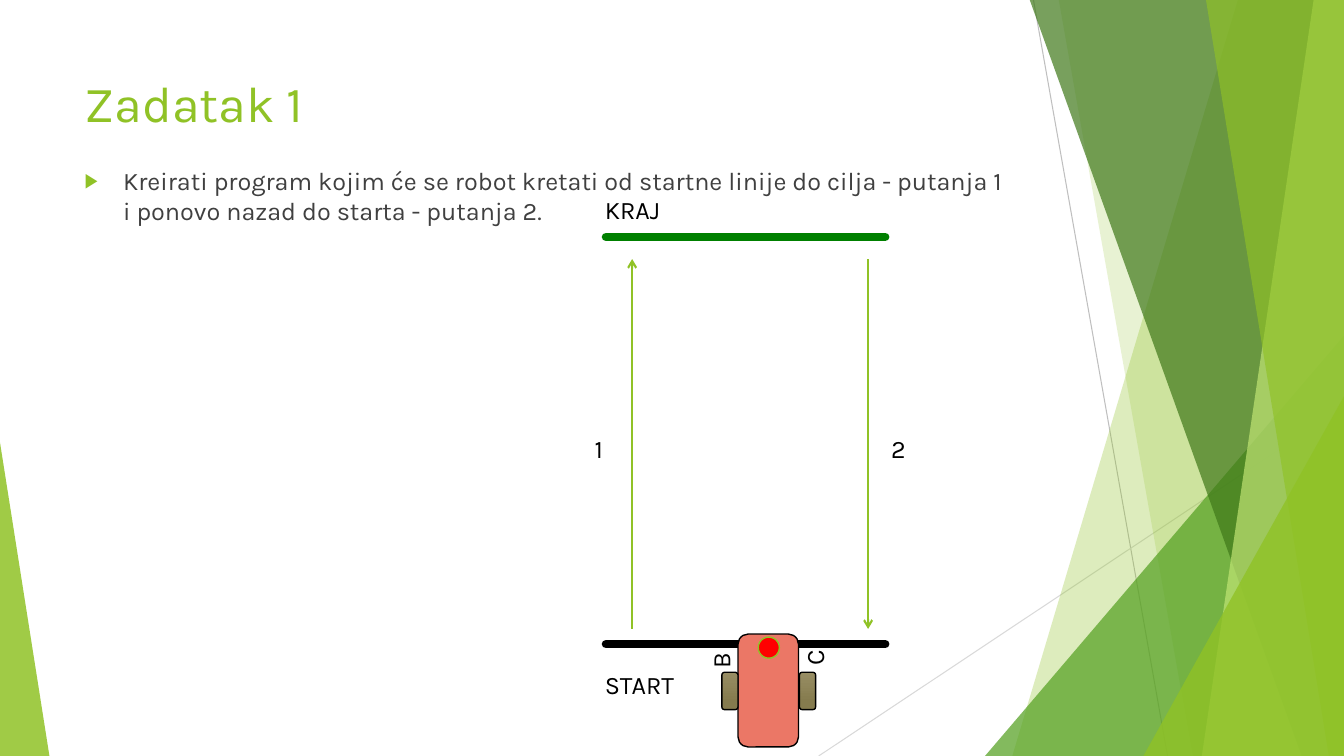
"""Build the slide for robot task 1: drive from the start line to the finish and back."""
from dataclasses import dataclass
from typing import Any, Optional, Union

import pptx
import pptx.dml.color
import pptx.enum.shapes
import pptx.enum.text
import pptx.oxml
import pptx.oxml.ns
import pptx.util
from lxml import etree

PX = 9144
SLIDE_WIDTH, SLIDE_HEIGHT = 1333, 750
FONT = "Karla"
COLOURS = {
    "lime": "90C226", "green": "54A021", "forest": "3F7819", "pale": "C0E474",
    "silver": "BFBFBF", "mist": "D9D9D9", "text": "404040", "black": "000000",
    "finish": "008000", "robot": "EB7766", "sensor": "FF0000",
    "wheel_top": "988E64", "wheel_bottom": "857B4E",
}
PRESET = pptx.enum.shapes.MSO_SHAPE
AUTO_SIZE = pptx.enum.text.MSO_AUTO_SIZE


@dataclass(frozen=True)
class Box:
    left: int
    top: int
    width: int
    height: int


@dataclass(frozen=True)
class Band:
    top_x: int
    bottom_x: int
    colour: str
    alpha: int


@dataclass(frozen=True)
class Figure:
    preset: Any
    box: Box
    colours: tuple[str, ...]
    outline: Optional[str] = None
    alpha: int = 100
    apex: Optional[float] = None


@dataclass(frozen=True)
class Stroke:
    start: tuple[int, int]
    end: tuple[int, int]
    colour: str
    width: float
    cap: str = "flat"
    arrow: bool = False


@dataclass(frozen=True)
class Label:
    text: str
    box: Box
    wrap: bool = True
    rotation: int = 0


BACKDROP: list[Union[Stroke, Band, Figure]] = [
    Stroke((1025, 0), (1158, 750), "silver", 0.75),
    Stroke((1333, 403), (812, 750), "mist", 0.75),
    Band(1228, 1004, "lime", 30),
    Band(1050, 1183, "lime", 20),
    Figure(PRESET.ISOSCELES_TRIANGLE, Box(977, 333, 356, 417), ("green",), alpha=72, apex=1),
    Band(1021, 1291, "forest", 70),
    Band(1303, 1192, "pale", 70),
    Band(1196, 1318, "lime", 65),
    Figure(PRESET.ISOSCELES_TRIANGLE, Box(1134, 393, 199, 357), ("lime",), alpha=80, apex=1),
    Figure(PRESET.ISOSCELES_TRIANGLE, Box(0, 439, 49, 311), ("lime",), alpha=85, apex=0),
]
COURSE = [
    Stroke((878, 235), (601, 235), "finish", 6, cap="rnd"),
    Stroke((878, 639), (601, 639), "black", 6, cap="rnd"),
    Stroke((627, 624), (627, 257), "lime", 1.5, arrow=True),
    Stroke((861, 257), (861, 624), "lime", 1.5, arrow=True),
    Label("KRAJ", Box(590, 188, 76, 40), wrap=False),
    Label("START", Box(590, 659, 100, 40), wrap=False),
]
WHEELS = [
    Figure(PRESET.ROUNDED_RECTANGLE, Box(left, 667, 16, 37), ("wheel_top", "wheel_bottom"), "black")
    for left in (793, 716)
]
ROBOT = [
    Figure(PRESET.ROUNDED_RECTANGLE, Box(732, 629, 60, 112), ("robot",), "black"),
    *WHEELS,
    Figure(PRESET.OVAL, Box(752, 632, 21, 21), ("sensor",), "lime"),
    Label("B", Box(687, 635, 45, 30), rotation=270),
    Label("C", Box(780, 633, 45, 30), rotation=270),
]
PATH_NUMBERS = [Label("1", Box(580, 425, 34, 40)), Label("2", Box(874, 425, 34, 40))]


def rgb(name: str) -> pptx.dml.color.RGBColor:
    return pptx.dml.color.RGBColor.from_string(COLOURS[name])


def emu(*lengths: int) -> list[int]:
    return [length * PX for length in lengths]


def edges(box: Box) -> list[int]:
    return emu(box.left, box.top, box.width, box.height)


def add_child(parent: Any, tag: str, **attributes: str) -> Any:
    return etree.SubElement(parent, pptx.oxml.ns.qn(tag), attributes)


def write(holder: Any, text: str, *, size: float = 18, colour: str = "black",
          wrap: bool = True, fit: Any = AUTO_SIZE.SHAPE_TO_FIT_TEXT) -> Any:
    frame = holder.text_frame
    frame.word_wrap = wrap
    frame.auto_size = fit
    frame.vertical_anchor = pptx.enum.text.MSO_ANCHOR.TOP
    paragraph = frame.paragraphs[0]
    paragraph.alignment = pptx.enum.text.PP_ALIGN.LEFT
    run = paragraph.add_run()
    run.text = text
    run.font.name = FONT
    run.font.size = pptx.util.Pt(size)
    run.font.color.rgb = rgb(colour)
    return paragraph


def paint(shape: Any, colours: tuple[str, ...], alpha: int, outline: Optional[str]) -> None:
    shape.shadow.inherit = False
    if len(colours) == 1:
        shape.fill.solid()
        shape.fill.fore_color.rgb = rgb(colours[0])
        if alpha < 100:
            tint = shape._element.spPr.find(".//" + pptx.oxml.ns.qn("a:srgbClr"))
            add_child(tint, "a:alpha", val=str(alpha * 1000))
    else:
        shape.fill.gradient()
        shape.fill.gradient_angle = 270
        for stop, colour, position in zip(shape.fill.gradient_stops, colours, (0, 0.78)):
            stop.color.rgb = rgb(colour)
            stop.position = position
    if outline:
        shape.line.color.rgb = rgb(outline)
        shape.line.width = pptx.util.Pt(1)
    else:
        shape.line.fill.background()


def draw_band(canvas: Any, band: Band) -> None:
    outline = canvas.build_freeform(band.top_x, -1, scale=PX)
    outline.add_line_segments(
        [(SLIDE_WIDTH, -1), (SLIDE_WIDTH, SLIDE_HEIGHT), (band.bottom_x, SLIDE_HEIGHT)], close=True)
    paint(outline.convert_to_shape(), (band.colour,), band.alpha, None)


def draw_figure(canvas: Any, figure: Figure) -> None:
    shape = canvas.add_shape(figure.preset, *edges(figure.box))
    if figure.apex is not None:
        shape.adjustments[0] = figure.apex
    paint(shape, figure.colours, figure.alpha, figure.outline)


def draw_stroke(canvas: Any, stroke: Stroke) -> None:
    connector = canvas.add_connector(
        pptx.enum.shapes.MSO_CONNECTOR.STRAIGHT, *emu(*stroke.start, *stroke.end))
    connector.line.color.rgb = rgb(stroke.colour)
    connector.line.width = pptx.util.Pt(stroke.width)
    properties = connector._element.spPr
    line = properties.find(pptx.oxml.ns.qn("a:ln"))
    line.set("cap", stroke.cap)
    if stroke.arrow:
        add_child(line, "a:tailEnd", type="arrow")
    add_child(properties, "a:effectLst")


def draw_label(canvas: Any, label: Label) -> None:
    holder = canvas.add_textbox(*edges(label.box))
    holder.rotation = label.rotation
    write(holder, label.text, wrap=label.wrap)


DRAWERS = {Band: draw_band, Figure: draw_figure, Stroke: draw_stroke, Label: draw_label}


def draw_all(canvas: Any, elements: list[Any]) -> None:
    for element in elements:
        DRAWERS[type(element)](canvas, element)


def place(holder: Any, box: Box) -> None:
    holder.left, holder.top, holder.width, holder.height = edges(box)


def add_task(slide: Any) -> None:
    heading, task = slide.placeholders
    place(heading, Box(74, 67, 940, 144))
    write(heading, "Zadatak 1", size=36, colour="lime", fit=AUTO_SIZE.NONE)
    place(task, Box(74, 159, 940, 502))
    paragraph = write(
        task, "Kreirati program kojim će se robot kretati od startne linije do cilja - putanja 1 "
        "i ponovo nazad do starta - putanja 2.", colour="text", fit=AUTO_SIZE.NONE)
    paragraph.space_before = pptx.util.Pt(10)
    properties = paragraph._p.get_or_add_pPr()
    properties.set("marL", str(38 * PX))
    properties.set("indent", str(-38 * PX))
    add_child(add_child(properties, "a:buClr"), "a:srgbClr", val=COLOURS["lime"])
    add_child(properties, "a:buSzPct", val="80000")
    add_child(properties, "a:buChar", char="▶")


def main() -> None:
    deck = pptx.Presentation()
    deck.slide_width, deck.slide_height = emu(SLIDE_WIDTH, SLIDE_HEIGHT)
    slide = deck.slides.add_slide(deck.slide_layouts[1])
    backdrop = slide.shapes.add_group_shape()
    draw_all(backdrop.shapes, BACKDROP)
    slide.shapes._spTree.insert(2, backdrop._element)
    add_task(slide)
    draw_all(slide.shapes, COURSE)
    draw_all(slide.shapes.add_group_shape().shapes, ROBOT)
    draw_all(slide.shapes, PATH_NUMBERS)
    deck.save("out.pptx")


if __name__ == "__main__":
    main()
